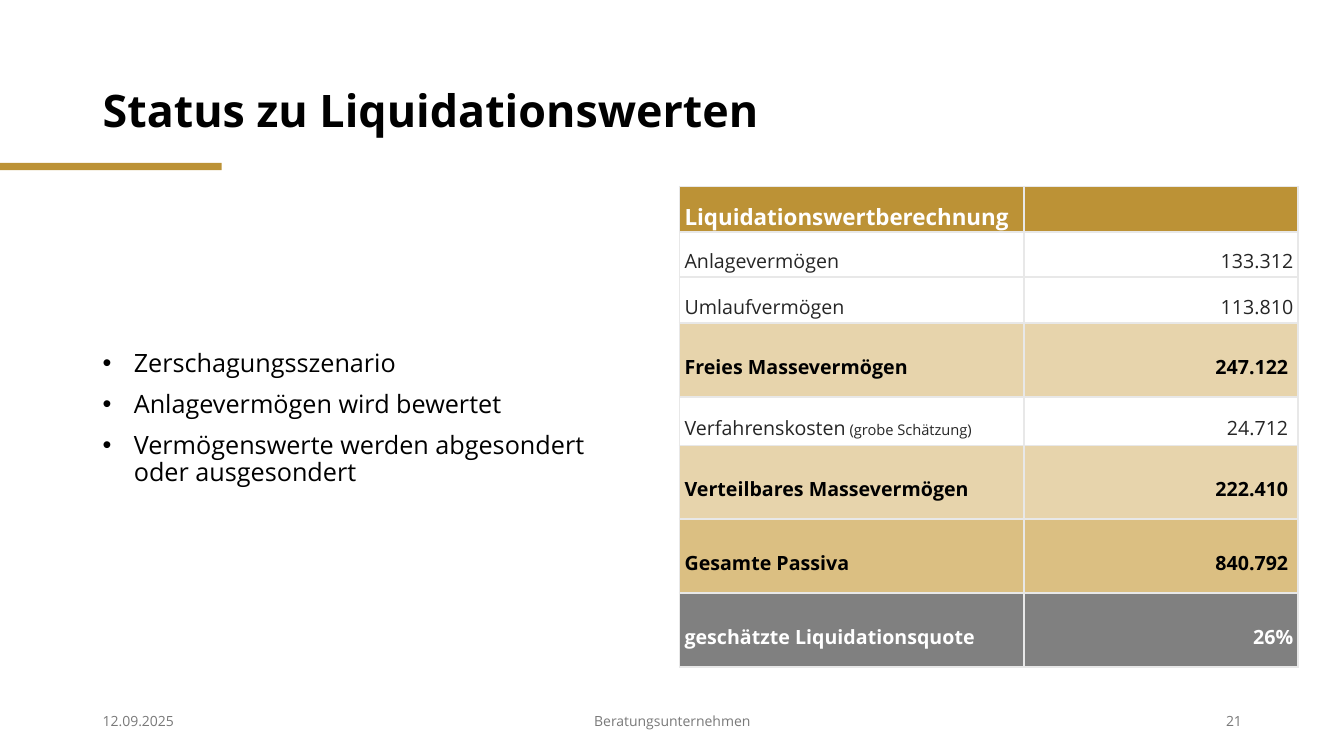
from dataclasses import dataclass

from lxml import etree
from pptx import Presentation
from pptx import util as u
from pptx.dml.color import RGBColor
from pptx.enum import shapes, text
from pptx.oxml import ns

SLIDE_W, SLIDE_H = u.Inches(13.333), u.Inches(7.5)
FONT = "Open Sans"
BLACK = RGBColor(0x00, 0x00, 0x00)
WHITE = RGBColor(0xFF, 0xFF, 0xFF)
INK = RGBColor(0x26, 0x26, 0x26)
FOOTER_GREY = RGBColor(0x79, 0x79, 0x79)
QUOTA_GREY = RGBColor(0x80, 0x80, 0x80)
GOLD = RGBColor(0xBC, 0x92, 0x36)
MID_GOLD = RGBColor(0xDB, 0xBF, 0x82)
PALE_GOLD = RGBColor(0xE7, 0xD4, 0xAC)
GRID_LINE = RGBColor(0xE8, 0xE8, 0xE8)

LEFT, MIDDLE, RIGHT = text.PP_ALIGN.LEFT, text.PP_ALIGN.CENTER, text.PP_ALIGN.RIGHT
MARGIN = 6.9
FOOTER_TOP, FOOTER_H = 92.67, 5.33
BULLET_INDENT = u.Inches(0.31)


@dataclass(frozen=True)
class Area:
    """A region in percent of the slide's width and height."""
    left: float
    top: float
    width: float
    height: float

    def emu(self) -> tuple[int, int, int, int]:
        return across(self.left), down(self.top), across(self.width), down(self.height)


@dataclass(frozen=True)
class TextBlock:
    area: Area
    lines: tuple[str, ...]
    size: float
    color: RGBColor = BLACK
    bold: bool = False
    align: text.PP_ALIGN = LEFT
    spacing: float = 1.0
    bulleted: bool = False


@dataclass(frozen=True)
class Position:
    """One row of the liquidation value table."""
    label: str
    amount: str
    height: float
    fill: RGBColor = WHITE
    color: RGBColor = INK
    bold: bool = False
    size: float = 14
    remark: str = ""
    amount_inset: float = 0.05


BLOCKS = (
    TextBlock(Area(MARGIN, 5.33, 86.25, 19.33), ("Status zu Liquidationswerten",),
              32, bold=True, spacing=0.9),
    TextBlock(Area(MARGIN, 26.67, 39.16, 57.5),
              ("Zerschagungsszenario", "Anlagevermögen wird bewertet",
               "Vermögenswerte werden abgesondert oder ausgesondert"),
              18, spacing=0.9, bulleted=True),
    TextBlock(Area(MARGIN, FOOTER_TOP, 22.5, FOOTER_H), ("12.09.2025",), 10, FOOTER_GREY),
    TextBlock(Area(33.15, FOOTER_TOP, 33.75, FOOTER_H), ("Beratungsunternehmen",),
              10, FOOTER_GREY, align=MIDDLE),
    TextBlock(Area(70.65, FOOTER_TOP, 22.5, FOOTER_H), ("21",), 10, FOOTER_GREY, align=RIGHT),
)

POSITIONS = (
    Position("Liquidationswertberechnung", "", 6, GOLD, WHITE, True, 16),
    Position("Anlagevermögen", "133.312", 6),
    Position("Umlaufvermögen", "113.810", 6),
    Position("Freies Massevermögen", "247.122", 9.87, PALE_GOLD, BLACK, True, amount_inset=0.1),
    Position("Verfahrenskosten", "24.712", 6.4, remark=" (grobe Schätzung)", amount_inset=0.1),
    Position("Verteilbares Massevermögen", "222.410", 9.75, PALE_GOLD, BLACK, True,
             amount_inset=0.1),
    Position("Gesamte Passiva", "840.792", 9.75, MID_GOLD, BLACK, True, amount_inset=0.1),
    Position("geschätzte Liquidationsquote", "26%", 9.75, QUOTA_GREY, WHITE, True),
)
TABLE_LEFT, TABLE_TOP = 50.56, 24.67
TABLE_COLUMNS = (25.65, 20.4)


def across(percent: float) -> int:
    return round(SLIDE_W * percent / 100)


def down(percent: float) -> int:
    return round(SLIDE_H * percent / 100)


def apply(target, values: dict) -> None:
    for name, value in values.items():
        setattr(target, name, value)


def style_font(font, size: float, color: RGBColor, bold: bool) -> None:
    apply(font, {"name": FONT, "size": u.Pt(size), "bold": bold})
    font.color.rgb = color


def add_bullet(paragraph) -> None:
    properties = paragraph._p.get_or_add_pPr()
    properties.set("marL", str(BULLET_INDENT))
    properties.set("indent", str(-BULLET_INDENT))
    etree.SubElement(properties, ns.qn("a:buFont"), typeface="Arial")
    etree.SubElement(properties, ns.qn("a:buChar"), char="•")


def add_text_block(slide, block: TextBlock) -> None:
    frame = slide.shapes.add_textbox(*block.area.emu()).text_frame
    apply(frame, {"word_wrap": True, "vertical_anchor": text.MSO_ANCHOR.MIDDLE})
    for index, line in enumerate(block.lines):
        paragraph = frame.add_paragraph() if index else frame.paragraphs[0]
        if block.bulleted:
            add_bullet(paragraph)
        apply(paragraph, {"alignment": block.align, "line_spacing": block.spacing,
                          "space_before": u.Pt(10 if index else 0)})
        run = paragraph.add_run()
        run.text = line
        style_font(run.font, block.size, block.color, block.bold)


def add_accent_bar(slide) -> None:
    bar = slide.shapes.add_shape(shapes.MSO_SHAPE.RECTANGLE, *Area(0, 21.55, 16.5, 0.95).emu())
    bar.shadow.inherit = False
    bar.fill.solid()
    bar.fill.fore_color.rgb = GOLD
    bar.line.fill.background()


def outline_cell(cell) -> None:
    """Draw the four borders, which must precede the cell's fill."""
    properties = cell._tc.get_or_add_tcPr()
    for index, side in enumerate(("lnL", "lnR", "lnT", "lnB")):
        border = etree.Element(ns.qn(f"a:{side}"), w=str(u.Pt(1.5)))
        fill = etree.SubElement(border, ns.qn("a:solidFill"))
        etree.SubElement(fill, ns.qn("a:srgbClr"), val=str(GRID_LINE))
        properties.insert(index, border)


def fill_cell(cell, position: Position, parts: tuple[tuple[str, float], ...],
              align: text.PP_ALIGN, right_inset: float) -> None:
    apply(cell, {"margin_left": u.Inches(0.05), "margin_right": u.Inches(right_inset),
                 "margin_top": 0, "margin_bottom": 0,
                 "vertical_anchor": text.MSO_ANCHOR.MIDDLE})
    cell.fill.solid()
    cell.fill.fore_color.rgb = position.fill
    outline_cell(cell)
    paragraph = cell.text_frame.paragraphs[0]
    apply(paragraph, {"alignment": align, "line_spacing": 1.5})
    for words, size in parts:
        if words:
            run = paragraph.add_run()
            run.text = words
            style_font(run.font, size, position.color, position.bold)


def add_liquidation_table(slide) -> None:
    area = Area(TABLE_LEFT, TABLE_TOP, sum(TABLE_COLUMNS), sum(p.height for p in POSITIONS))
    table = slide.shapes.add_table(len(POSITIONS), len(TABLE_COLUMNS), *area.emu()).table
    apply(table, {"first_row": False, "horz_banding": False})
    for column, width in zip(table.columns, TABLE_COLUMNS):
        column.width = across(width)
    for row, position in zip(table.rows, POSITIONS):
        row.height = down(position.height)
        label, amount = row.cells
        fill_cell(label, position, ((position.label, position.size), (position.remark, 10.5)),
                  LEFT, 0.05)
        fill_cell(amount, position, ((position.amount, position.size),),
                  RIGHT, position.amount_inset)


def main() -> None:
    deck = Presentation()
    apply(deck, {"slide_width": SLIDE_W, "slide_height": SLIDE_H})
    slide = deck.slides.add_slide(deck.slide_layouts[6])
    add_accent_bar(slide)
    for block in BLOCKS:
        add_text_block(slide, block)
    add_liquidation_table(slide)
    deck.save("out.pptx")


if __name__ == "__main__":
    main()
